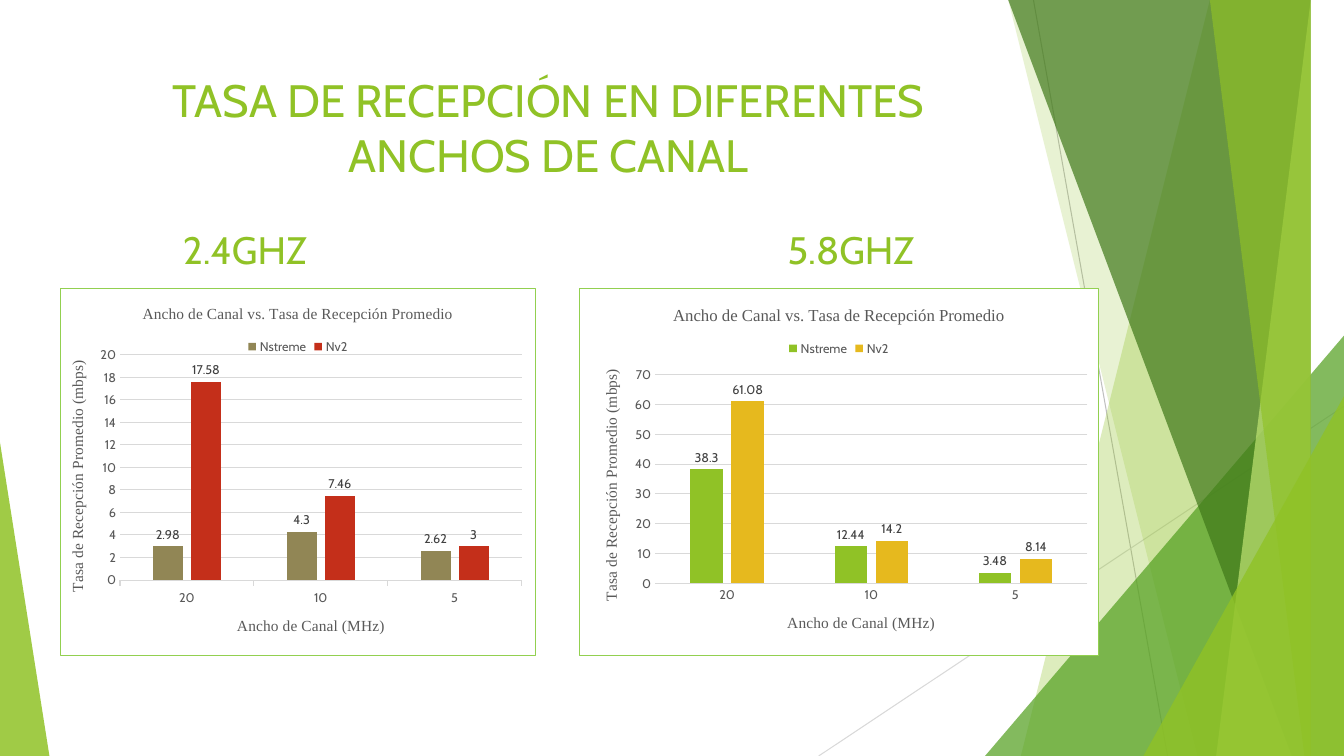
import pptx
import pptx.chart.data
import pptx.dml.color
import pptx.enum.chart
import pptx.enum.shapes
import pptx.enum.text
import pptx.oxml
import pptx.oxml.ns
import pptx.util
from lxml import etree

Inches, Pt = pptx.util.Inches, pptx.util.Pt
qn = pptx.oxml.ns.qn
XL = pptx.enum.chart

COLORS = {
    "green": "90C226", "leaf": "54A021", "forest": "3F7819", "lime": "C0E474",
    "border": "92D050", "olive": "918655", "red": "C42F1A", "gold": "E6B91E",
    "grid": "D9D9D9", "ray": "BFBFBF", "axis": "595959", "label": "404040",
    "black": "000000", "white": "FFFFFF",
}
BODY, SERIF = "Cabin", "Times New Roman"
TITLE = "TASA DE RECEPCIÓN EN DIFERENTES ANCHOS DE CANAL"
CHART_TITLE = "Ancho de Canal vs. Tasa de Recepción Promedio"
X_TITLE, Y_TITLE = "Ancho de Canal (MHz)", "Tasa de Recepción Promedio (mbps)"
WIDTHS = ["20", "10", "5"]

PANELS = [
    {"heading": "2.4GHZ", "center": 2.43, "box": (0.59, 2.86, 4.73, 3.65),
     "title_size": 11, "tick": XL.XL_TICK_MARK.OUTSIDE, "max": 20, "step": 2,
     "plot": (0.126, 0.18, 0.844, 0.614),
     "series": [("Nstreme", (2.98, 4.3, 2.62), "olive"),
                ("Nv2", (17.58, 7.46, 3), "red")]},
    {"heading": "5.8GHZ", "center": 8.44, "box": (5.74, 2.86, 5.16, 3.65),
     "title_size": 12, "tick": XL.XL_TICK_MARK.NONE, "max": 70, "step": 10,
     "plot": (0.146, 0.235, 0.833, 0.568),
     "series": [("Nstreme", (38.3, 12.44, 3.48), "green"),
                ("Nv2", (61.08, 14.2, 8.14), "gold")]},
]

RAYS = [((10.25, 0), (11.58, 7.5), "ray"), ((13.33, 4.03), (8.12, 7.5), "grid")]
# Bands run to the right edge: (top x, bottom x, colour, opacity %)
# Triangles: (left, top, width, apex position, colour, opacity %)
FACETS = [
    ("band", (12.28, 10.04), "green", 30),
    ("band", (10.5, 11.83), "green", 20),
    ("triangle", (9.77, 3.33, 3.56, 1), "leaf", 72),
    ("band", (10.21, 12.91), "forest", 70),
    ("band", (13.03, 11.92), "lime", 70),
    ("band", (11.96, 13.18), "green", 65),
    ("triangle", (11.34, 3.93, 1.99, 1), "green", 80),
    ("triangle", (0, 4.39, 0.49, 0), "green", 85),
]
SLIDE_W, SLIDE_H = 13.33, 7.5


def rgb(name):
    return pptx.dml.color.RGBColor.from_string(COLORS[name])


def set_font(font, size, color, name=BODY):
    for key, value in {"size": Pt(size), "name": name, "bold": False}.items():
        setattr(font, key, value)
    font.color.rgb = rgb(color)


def set_line(line, color):
    line.color.rgb = rgb(color)
    line.width = Pt(0.75)


def write(tf, text, size):
    """Fill a text frame with one centred green paragraph."""
    tf.word_wrap = True
    tf.vertical_anchor = pptx.enum.text.MSO_ANCHOR.MIDDLE
    p = tf.paragraphs[0]
    p.alignment = pptx.enum.text.PP_ALIGN.CENTER
    r = p.add_run()
    r.text = text
    set_font(r.font, size, "green")


def add_ray(s, start, end, color):
    ends = [Inches(v) for v in start + end]
    line = s.shapes.add_connector(pptx.enum.shapes.MSO_CONNECTOR.STRAIGHT, *ends)
    set_line(line.line, color)
    etree.SubElement(line.element.spPr, qn("a:effectLst"))


def add_facet(s, kind, geometry, color, opacity):
    if kind == "band":
        top, bottom = geometry
        builder = s.shapes.build_freeform(top, -0.01, scale=Inches(1))
        builder.add_line_segments(
            [(SLIDE_W, -0.01), (SLIDE_W, SLIDE_H), (bottom, SLIDE_H)], close=True)
        sp = builder.convert_to_shape()
    else:
        x, y, w, apex = geometry
        box = [Inches(v) for v in (x, y, w, SLIDE_H - y)]
        sp = s.shapes.add_shape(
            pptx.enum.shapes.MSO_SHAPE.ISOSCELES_TRIANGLE, *box)
        sp.adjustments[0] = apex
    sp.shadow.inherit = False
    sp.fill.solid()
    sp.fill.fore_color.rgb = rgb(color)
    sp.line.fill.background()
    solid = next(sp.element.iter(qn("a:srgbClr")))
    etree.SubElement(solid, qn("a:alpha"), val=str(opacity * 1000))


def set_chart_title(tf, text, size):
    p = tf.paragraphs[0]
    r = p.add_run()
    r.text = text
    set_font(r.font, size, "axis", SERIF)


def set_plot_area(chart, plot):
    area = chart.element.find(".//" + qn("c:plotArea"))
    for old in area.findall(qn("c:layout")):
        area.remove(old)
    layout = etree.Element(qn("c:layout"))
    area.insert(0, layout)
    manual = etree.SubElement(layout, qn("c:manualLayout"))
    values = [("layoutTarget", "inner"), ("xMode", "edge"), ("yMode", "edge")]
    for tag, value in values + list(zip("xywh", plot)):
        etree.SubElement(manual, qn("c:" + tag), val=str(value))


def set_frame(chart):
    """Give the whole chart a white ground and a thin green border."""
    ns = pptx.oxml.ns.nsdecls("c", "a")
    frame = pptx.oxml.parse_xml(
        f'<c:spPr {ns}><a:solidFill><a:srgbClr val="{COLORS["white"]}"/></a:solidFill>'
        f'<a:ln w="{Pt(0.75)}"><a:solidFill><a:srgbClr val="{COLORS["border"]}"/>'
        '</a:solidFill></a:ln></c:spPr>')
    chart.element.find(qn("c:chart")).addnext(frame)


def add_rate_chart(s, panel):
    data = pptx.chart.data.CategoryChartData()
    data.categories = WIDTHS
    for name, values, _ in panel["series"]:
        data.add_series(name, values)
    box = [Inches(v) for v in panel["box"]]
    chart = s.shapes.add_chart(XL.XL_CHART_TYPE.COLUMN_CLUSTERED, *box, data).chart
    set_font(chart.font, 10, "black")
    chart.has_title = True
    set_chart_title(chart.chart_title.text_frame, CHART_TITLE, panel["title_size"])
    chart.has_legend = True
    chart.legend.position = XL.XL_LEGEND_POSITION.TOP
    chart.legend.include_in_layout = False
    set_font(chart.legend.font, 9, "axis")

    plot = chart.plots[0]
    plot.vary_by_categories = False
    plot.gap_width, plot.overlap = 219, -27
    for series, (_, _, color) in zip(plot.series, panel["series"]):
        series.format.fill.solid()
        series.format.fill.fore_color.rgb = rgb(color)
        labels = series.data_labels
        labels.show_value = True
        labels.position = XL.XL_LABEL_POSITION.OUTSIDE_END
        set_font(labels.font, 9, "label")

    x_axis, y_axis = chart.category_axis, chart.value_axis
    for axis, text in ((x_axis, X_TITLE), (y_axis, Y_TITLE)):
        set_chart_title(axis.axis_title.text_frame, text, 11)
        set_font(axis.tick_labels.font, 9, "axis")
        axis.minor_tick_mark = XL.XL_TICK_MARK.NONE
    x_axis.major_tick_mark = panel["tick"]
    set_line(x_axis.format.line, "grid")
    y_axis.major_tick_mark = XL.XL_TICK_MARK.NONE
    y_axis.format.line.fill.background()
    y_axis.minimum_scale, y_axis.maximum_scale = 0, panel["max"]
    y_axis.major_unit = panel["step"]
    set_line(y_axis.major_gridlines.format.line, "grid")
    body = next(y_axis.axis_title.element.iter(qn("a:bodyPr")))
    body.set("rot", "-5400000")
    body.set("vert", "horz")
    set_plot_area(chart, panel["plot"])
    set_frame(chart)


def main():
    prs = pptx.Presentation()
    prs.slide_width, prs.slide_height = Inches(SLIDE_W), Inches(SLIDE_H)
    s = prs.slides.add_slide(prs.slide_layouts[5])
    for ray in RAYS:
        add_ray(s, *ray)
    for facet in FACETS:
        add_facet(s, *facet)

    title = s.shapes.title
    s.shapes.element.append(title.element)
    title.left, title.top, title.width, title.height = map(
        Inches, (0.74, 0.67, 9.4, 1.18))
    write(title.text_frame, TITLE, 32.4)

    for panel in PANELS:
        heading = s.shapes.add_textbox(
            Inches(panel["center"] - 1), Inches(2.18), Inches(2), Inches(0.58))
        write(heading.text_frame, panel["heading"], 27.3)
        add_rate_chart(s, panel)
    prs.save("out.pptx")


if __name__ == "__main__":
    main()
